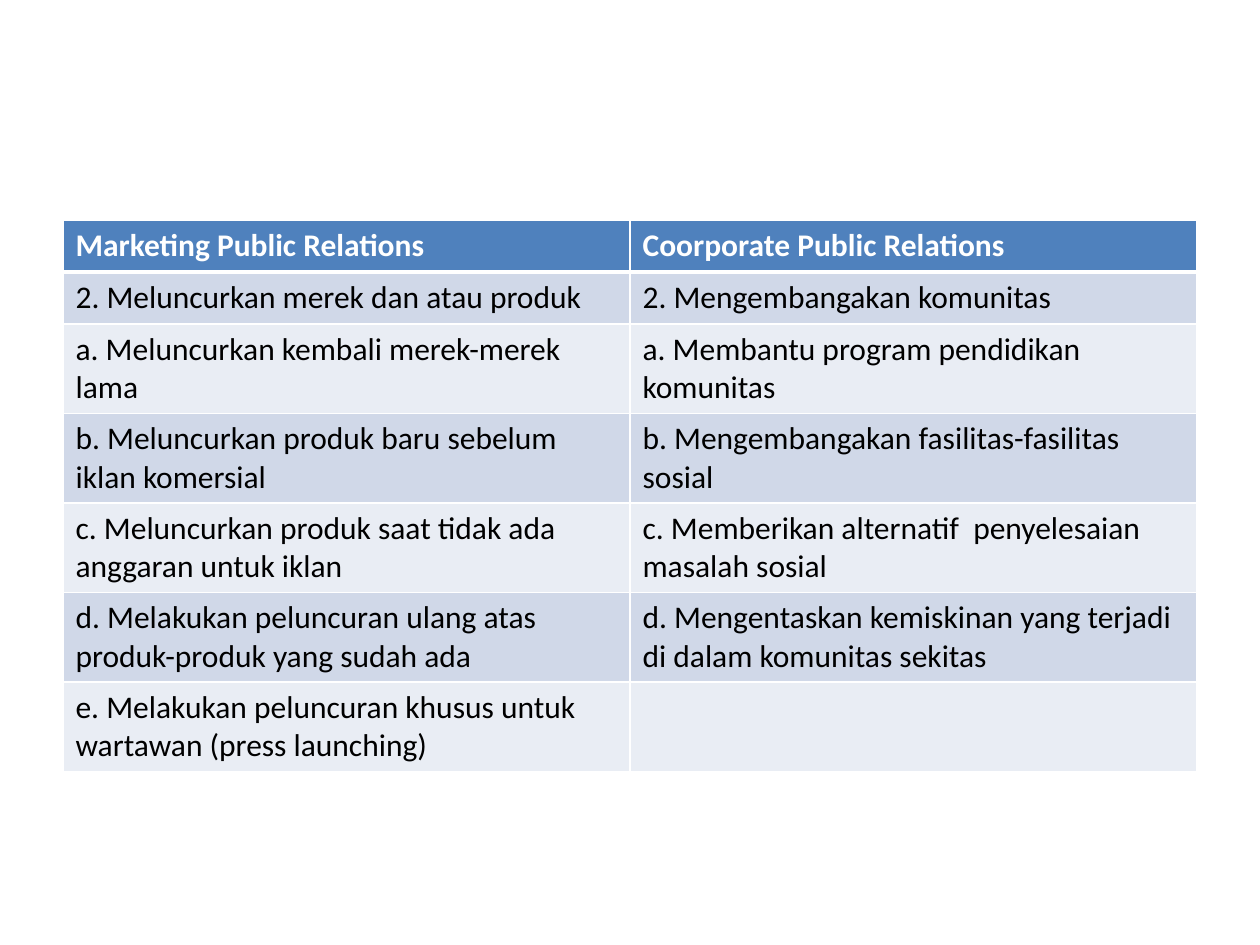
from lxml.etree import SubElement
from pptx import Presentation
from pptx.dml.color import RGBColor
from pptx.oxml.ns import qn
from pptx.util import Inches, Pt

ROWS = [
    ("Marketing Public Relations", "Coorporate Public Relations"),
    ("2. Meluncurkan merek dan atau produk", "2. Mengembangakan komunitas"),
    ("a. Meluncurkan kembali merek-merek lama",
     "a. Membantu program pendidikan komunitas"),
    ("b. Meluncurkan produk baru sebelum iklan komersial",
     "b. Mengembangakan fasilitas-fasilitas sosial"),
    ("c. Meluncurkan produk saat tidak ada anggaran untuk iklan",
     "c. Memberikan alternatif  penyelesaian masalah sosial"),
    ("d. Melakukan peluncuran ulang atas produk-produk yang sudah ada",
     "d. Mengentaskan kemiskinan yang terjadi di dalam komunitas sekitas"),
    ("e. Melakukan peluncuran khusus untuk wartawan (press launching)", ""),
]

THEME = {
    "font": "Calibri",
    "size": 18,
    "header_fill": "4F81BD",
    "band_fills": ("D0D8E8", "E9EDF4"),
    "header_text": "FFFFFF",
    "body_text": "000000",
    "border": "FFFFFF",
    "thin": 1,
    "thick": 3,
}

LEFT, TOP, WIDTH, HEIGHT = 0.5, 1.75, 9, 4.31
ROW_HEIGHT = 0.41  # minimum; two-line rows grow to fit


def add_borders(cell, widths):
    """Draw cell edges; widths maps L, R, T, B to points."""
    properties = cell._tc.get_or_add_tcPr()
    for side, width in widths.items():
        line = SubElement(properties, qn(f"a:ln{side}"), w=str(Pt(width)))
        fill = SubElement(line, qn("a:solidFill"))
        SubElement(fill, qn("a:srgbClr"), val=THEME["border"])


def format_cell(cell, text, row_index):
    is_header = row_index == 0
    thin, thick = THEME["thin"], THEME["thick"]
    add_borders(cell, {
        "L": thin,
        "R": thin,
        "T": thick if row_index == 1 else thin,
        "B": thick if is_header else thin,
    })
    fill = THEME["header_fill"] if is_header else THEME["band_fills"][(row_index - 1) % 2]
    cell.fill.solid()
    cell.fill.fore_color.rgb = RGBColor.from_string(fill)

    cell.text = text
    font = cell.text_frame.paragraphs[0].font
    font_format = {"name": THEME["font"], "size": Pt(THEME["size"]), "bold": is_header}
    runs = cell.text_frame.paragraphs[0].runs
    for target in [font] + [run.font for run in runs]:
        for attribute, value in font_format.items():
            setattr(target, attribute, value)
        color = THEME["header_text" if is_header else "body_text"]
        target.color.rgb = RGBColor.from_string(color)


def main():
    presentation = Presentation()
    presentation.slide_width, presentation.slide_height = Inches(10), Inches(7.5)
    slide = presentation.slides.add_slide(presentation.slide_layouts[6])

    frame = slide.shapes.add_table(
        len(ROWS), len(ROWS[0]),
        Inches(LEFT), Inches(TOP), Inches(WIDTH), Inches(HEIGHT))
    table = frame.table
    for row_index, texts in enumerate(ROWS):
        table.rows[row_index].height = Inches(ROW_HEIGHT)
        for column_index, text in enumerate(texts):
            format_cell(table.cell(row_index, column_index), text, row_index)
    frame.height = Inches(HEIGHT)

    presentation.save("out.pptx")


if __name__ == "__main__":
    main()
